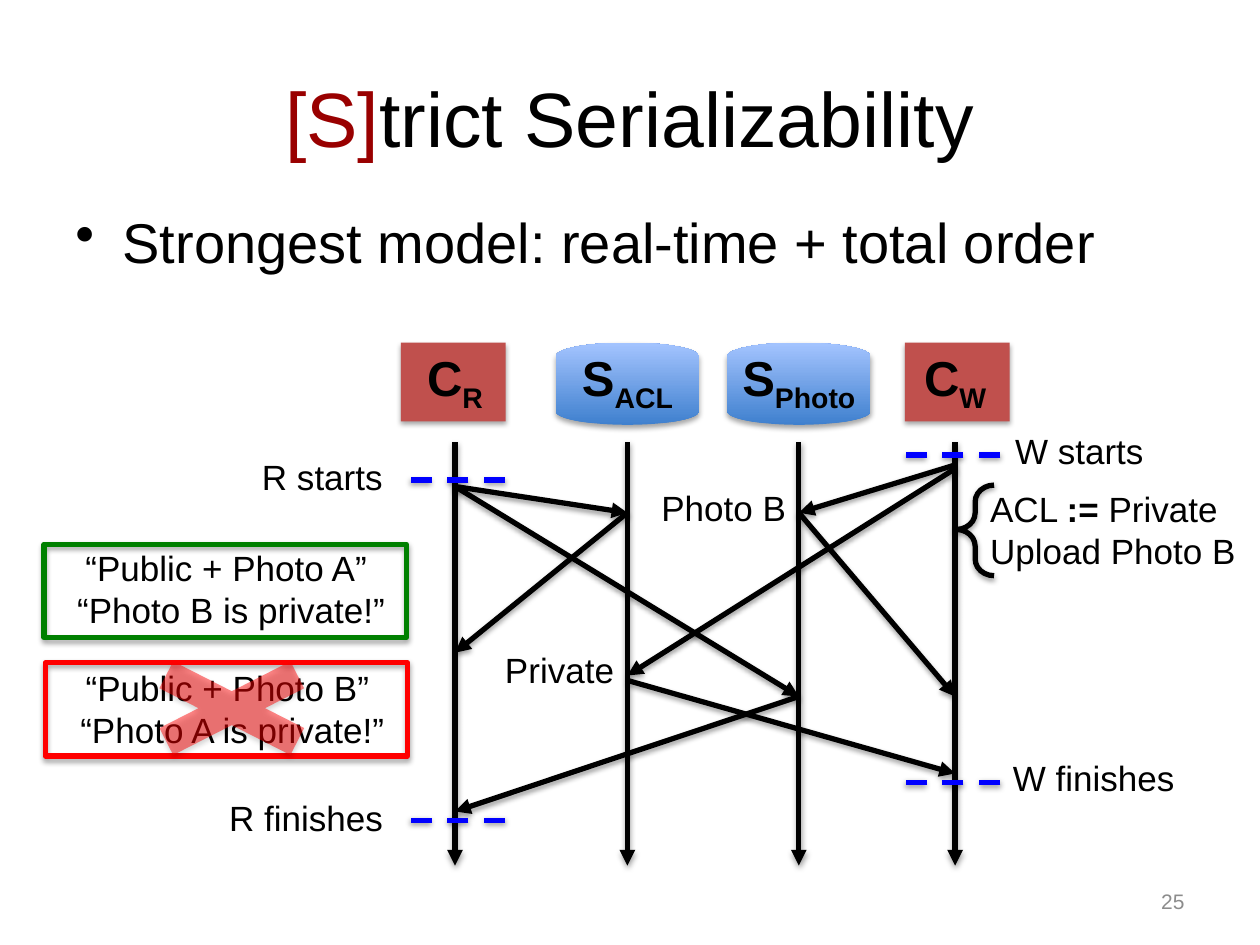
from dataclasses import dataclass

from lxml.etree import SubElement
from pptx import Presentation
from pptx.dml.color import RGBColor
from pptx.enum.dml import MSO_LINE
from pptx.enum.shapes import MSO_CONNECTOR, MSO_SHAPE
from pptx.enum.text import MSO_ANCHOR, MSO_AUTO_SIZE, PP_ALIGN
from pptx.oxml.ns import qn
from pptx.util import Pt


@dataclass(frozen=True)
class Theme:
    font: str = "Arial"
    ink: str = "000000"
    accent: str = "990000"
    muted: str = "8C8C8C"
    client: str = "C0504D"
    server_dark: str = "3F80CE"
    server_light: str = "A4C4FF"
    marker: str = "0000FF"
    allowed: str = "008000"
    forbidden: str = "FF0000"
    title: int = 44
    body: int = 32
    head: int = 28
    label: int = 20
    footer: int = 12
    stroke: int = 3


THEME = Theme()

# Lifelines: centre x, role, subscript, head left, label width
LANES = {
    "R": (260, "C", "R", 229, 82),
    "ACL": (358.5, "S", "ACL", 317.5, 82),
    "Photo": (456.5, "S", "Photo", 415.5, 91),
    "W": (545.8, "C", "W", 517, 82),
}
HEAD_TOP, LIFE_START, LIFE_END = 195.8, 252.7, 494.6

# Messages: sender, time sent, receiver, time received
MESSAGES = [
    ("W", 267.8, "ACL", 386), ("W", 265.7, "Photo", 293),
    ("ACL", 388.8, "W", 442), ("Photo", 293, "W", 398),
    ("R", 278, "ACL", 293), ("R", 278, "Photo", 398),
    ("ACL", 293, "R", 373), ("Photo", 398, "R", 463.7),
]

# Start and finish markers: text, text left, text top, text width, dash left, dash y
MARKERS = [
    ("W starts", 573, 242, 92, 512.6, 260),
    ("W finishes", 571.7, 428.5, 111, 512.6, 447),
    ("R starts", 142.6, 256.5, 87, 229.7, 274.3),
    ("R finishes", 123.8, 451.5, 106, 229.7, 468.7),
]
DASH_LENGTH = 59

# Outcomes: lines, text left, text top, frame left, frame top, colour
OUTCOMES = [
    (("“Public + Photo A” ", "“Photo B is private!”"), 28.8, 309, 25.2, 311, THEME.allowed),
    (("“Public + Photo B” ", "“Photo A is private!”"), 29.5, 377.2, 25.9, 378.8, THEME.forbidden),
]


def rgb(value):
    return RGBColor.from_string(value)


def add_shadow(element, alpha=35, distance=1.8):
    """Give a shape or connector a soft shadow falling straight down."""
    properties = element._element.spPr
    for effects in properties.findall(qn("a:effectLst")):
        properties.remove(effects)
    effects = SubElement(properties, qn("a:effectLst"))
    shadow = SubElement(effects, qn("a:outerShdw"), blurRad=str(Pt(3.1)),
                        dist=str(Pt(distance)), dir="5400000", rotWithShape="0")
    color = SubElement(shadow, qn("a:srgbClr"), val=THEME.ink)
    SubElement(color, qn("a:alpha"), val=str(alpha * 1000))


def add_text(slide, box, paragraphs, size, color=THEME.ink, align=PP_ALIGN.LEFT,
             anchor=MSO_ANCHOR.TOP, bold=None, wrap=True, grow=True):
    """Each paragraph is a list of run texts."""
    frame = slide.shapes.add_textbox(*map(Pt, box)).text_frame
    frame.word_wrap = wrap
    frame.vertical_anchor = anchor
    frame.auto_size = MSO_AUTO_SIZE.SHAPE_TO_FIT_TEXT if grow else MSO_AUTO_SIZE.NONE
    for index, texts in enumerate(paragraphs):
        paragraph = frame.paragraphs[0] if index == 0 else frame.add_paragraph()
        paragraph.alignment = align
        font = paragraph.font
        font.name, font.size, font.bold = THEME.font, Pt(size), bold
        font.color.rgb = rgb(color)
        for text in texts:
            paragraph.add_run().text = text
    return frame


def add_label(slide, box, *lines):
    return add_text(slide, box, [[line] if isinstance(line, str) else line for line in lines],
                    THEME.label, wrap=False)


def add_line(slide, start, end, color=THEME.ink, arrow=False, dashed=False):
    line = slide.shapes.add_connector(MSO_CONNECTOR.STRAIGHT, *map(Pt, (*start, *end)))
    line.line.color.rgb = rgb(color)
    line.line.width = Pt(THEME.stroke)
    if dashed:
        line.line.dash_style = MSO_LINE.DASH
    if arrow:
        SubElement(line.line._get_or_add_ln(), qn("a:tailEnd"), type="triangle")
    add_shadow(line, 38, 1.6)


def add_figure(slide, kind, box, fill=None, outline=None, alpha=None):
    figure = slide.shapes.add_shape(kind, *map(Pt, box))
    if fill is None:
        figure.fill.background()
    elif isinstance(fill, tuple):
        figure.fill.gradient()
        figure.fill.gradient_angle = 90
        for stop, color in zip(figure.fill.gradient_stops, fill):
            stop.color.rgb = rgb(color)
    else:
        figure.fill.solid()
        figure.fill.fore_color.rgb = rgb(fill)
    if alpha:
        color = figure._element.spPr.find(qn("a:solidFill")).find(qn("a:srgbClr"))
        SubElement(color, qn("a:alpha"), val=str(alpha * 1000))
    if outline:
        figure.line.color.rgb = rgb(outline)
        figure.line.width = Pt(THEME.stroke)
    else:
        figure.line.fill.background()
    add_shadow(figure)
    return figure


def add_heading(slide):
    title = add_text(slide, (36, 21.6, 648, 90), [["[S]", "trict Serializability"]], THEME.title,
                     align=PP_ALIGN.CENTER, anchor=MSO_ANCHOR.MIDDLE, grow=False)
    title.paragraphs[0].runs[0].font.color.rgb = rgb(THEME.accent)

    body = add_text(slide, (36, 115.2, 648, 356.4),
                    [["Strongest model: real-time + total order"]], THEME.body, grow=False)
    point = body.paragraphs[0]
    point.space_before = Pt(6.4)
    properties = point._p.get_or_add_pPr()
    properties.set("marL", str(Pt(27)))
    properties.set("indent", str(Pt(-27)))
    bullet = properties.makeelement(qn("a:buChar"), {"char": "•"})
    properties.find(qn("a:defRPr")).addprevious(bullet)

    add_text(slide, (516, 500.4, 168, 28.8), [["25"]], THEME.footer, THEME.muted,
             PP_ALIGN.RIGHT, MSO_ANCHOR.MIDDLE, grow=False)


def add_lane(slide, x, role, subscript, head_left, label_width):
    if role == "S":
        add_figure(slide, MSO_SHAPE.FLOWCHART_MAGNETIC_DISK, (head_left, HEAD_TOP, 82, 47),
                   (THEME.server_dark, THEME.server_light))
    else:
        add_figure(slide, MSO_SHAPE.RECTANGLE, (head_left, HEAD_TOP, 60, 45), THEME.client)
    add_line(slide, (x, LIFE_START), (x, LIFE_END), arrow=True)
    name = add_text(slide, (x - label_width / 2, 195, label_width, 75), [[role, subscript]],
                    THEME.head, align=PP_ALIGN.CENTER, bold=True)
    name.paragraphs[0].runs[1].font._element.set("baseline", "-25000")


def add_write_note(slide):
    brace = add_figure(slide, MSO_SHAPE.RIGHT_BRACE, (546.5, 277.2, 21.6, 51.8),
                       outline=THEME.ink)
    brace.adjustments[0], brace.adjustments[1] = 0.44, 0.49
    brace._element.spPr.find(qn("a:xfrm")).set("flipH", "1")
    add_shadow(brace, 38, 1.6)
    note = add_label(slide, (558.7, 275, 162.7, 55.4), ["ACL ", ":=", " Private"],
                     "Upload Photo B")
    note.paragraphs[0].runs[1].font.bold = True


def main():
    deck = Presentation()
    deck.slide_width, deck.slide_height = Pt(720), Pt(540)
    slide = deck.slides.add_slide(deck.slide_layouts[6])
    add_heading(slide)

    # Lifelines and the messages between them
    for lane in LANES.values():
        add_lane(slide, *lane)
    for sender, sent, receiver, received in MESSAGES:
        add_line(slide, (LANES[sender][0], sent), (LANES[receiver][0], received), arrow=True)
    add_label(slide, (281.5, 367.2, 80, 31.7), "Private")
    add_label(slide, (370.8, 274.3, 90, 31.7), "Photo B")

    # Start and finish of each transaction
    add_write_note(slide)
    for text, left, top, width, dash_left, dash_y in MARKERS:
        add_label(slide, (left, top, width, 31.7), text)
        add_line(slide, (dash_left + DASH_LENGTH, dash_y), (dash_left, dash_y),
                 THEME.marker, dashed=True)

    # Allowed and forbidden outcomes
    for lines, left, top, frame_left, frame_top, color in OUTCOMES:
        add_text(slide, (left, top, 206.5, 80), [[line] for line in lines], THEME.label,
                 align=PP_ALIGN.CENTER)
        add_figure(slide, MSO_SHAPE.RECTANGLE, (frame_left, frame_top, 207, 53.3), outline=color)
    add_figure(slide, MSO_SHAPE.MATH_MULTIPLY, (60.5, 368, 144, 73.4), THEME.forbidden, alpha=47)

    deck.save("out.pptx")


if __name__ == "__main__":
    main()
